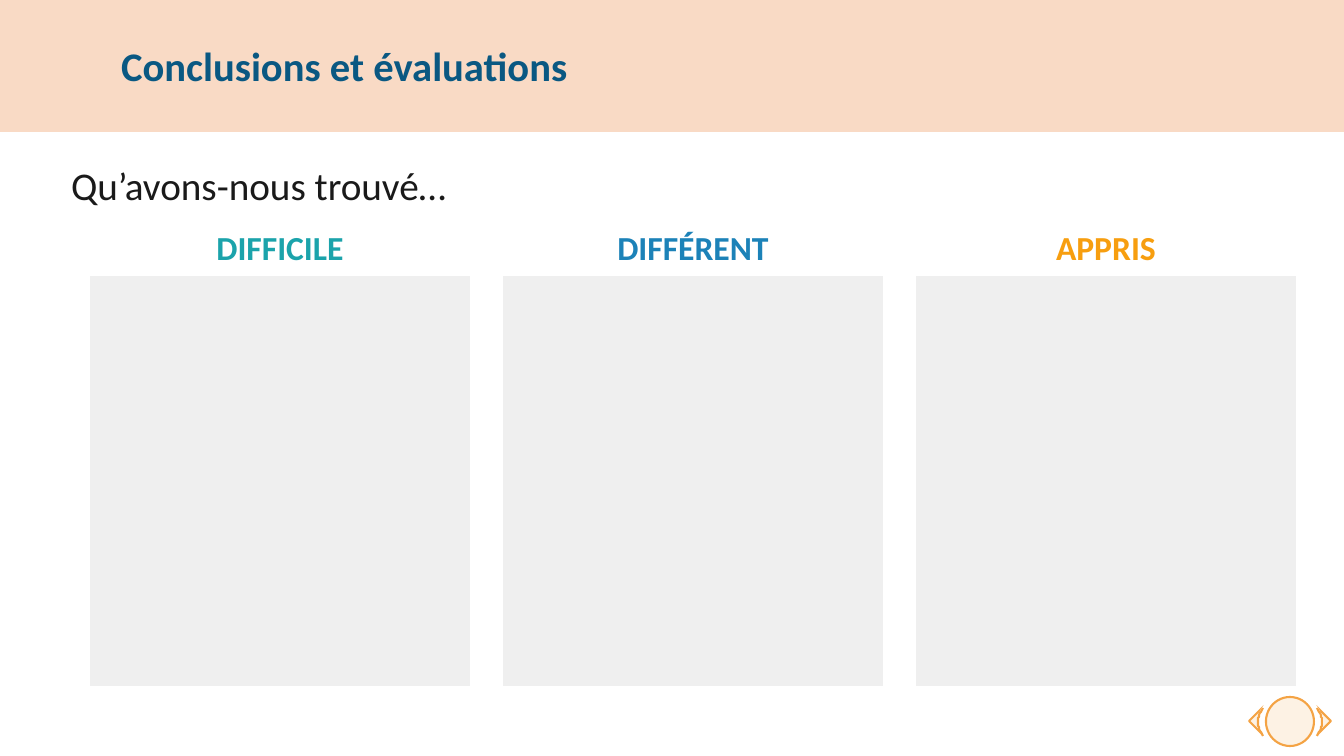
from pptx import Presentation
from pptx.dml.color import RGBColor
from pptx.enum.shapes import MSO_SHAPE
from pptx.enum.text import MSO_ANCHOR, MSO_AUTO_SIZE, PP_ALIGN
from pptx.oxml.ns import qn
from pptx.util import Pt
from lxml.etree import SubElement

PX = 914400 / 100.8
COLORS = {
    "band": "ED7D31", "nav": "F4A344", "white": "FFFFFF", "panel": "EFEFEF",
    "title": "0A5882", "lead": "1A1A1A",
    "teal": "1BA3AB", "blue": "1C82B8", "amber": "F79E0F",
}
COLUMNS = [("DIFFICILE", "teal"), ("DIFFÉRENT", "blue"), ("APPRIS", "amber")]
LEFT, PITCH, WIDE = 90, 413, 380
CENTER = 1290


def emu(*sizes):
    return [round(size * PX) for size in sizes]


def rgb(name):
    return RGBColor.from_string(COLORS[name])


def outline(shape, color):
    shape.shadow.inherit = False
    if color:
        shape.line.color.rgb = rgb(color)
        shape.line.width = Pt(1.5)
    else:
        shape.line.fill.background()


def add_block(slide, kind, box, fill, line=None, alpha=100):
    shape = slide.shapes.add_shape(kind, *emu(*box))
    shape.fill.solid()
    shape.fill.fore_color.rgb = rgb(fill)
    if alpha < 100:
        color = shape.fill._xPr.find(qn("a:solidFill"))[0]
        SubElement(color, qn("a:alpha"), val=str(alpha * 1000))
    outline(shape, line)
    return shape


def add_nav(slide):
    """Draw the round button with an arrow tip on each side."""
    for side in (-1, 1):
        mid = CENTER + side * 25
        arrow = add_block(slide, MSO_SHAPE.STRIPED_RIGHT_ARROW,
                          (mid - 16, 706, 32, 30), "nav", "nav", 14)
        arrow.rotation = 180 if side < 0 else 0
        add_block(slide, MSO_SHAPE.OVAL,
                  (CENTER + side * 7 - 24, 697, 48, 49), "white", "white")
        steps = [step / 8 for step in range(-8, 9)]
        curve = [(CENTER + side * (32 - 5 * t * t), 722 + 14 * t)
                 for t in steps]
        pen = slide.shapes.build_freeform(*curve[0], scale=PX)
        pen.add_line_segments(curve[1:], close=False)
        edge = pen.convert_to_shape()
        edge.fill.background()
        outline(edge, "nav")
    add_block(slide, MSO_SHAPE.OVAL, (CENTER - 24, 697, 48, 49),
              "nav", "nav", 14)


def set_text(holder, box, text, size, color, bold=True,
             align=PP_ALIGN.LEFT, anchor=MSO_ANCHOR.TOP, space=0.9):
    holder.left, holder.top, holder.width, holder.height = emu(*box)
    frame = holder.text_frame
    frame.text = text
    frame.word_wrap = True
    frame.auto_size = MSO_AUTO_SIZE.NONE
    frame.vertical_anchor = anchor
    para = frame.paragraphs[0]
    props = para._p.get_or_add_pPr()
    props.set("marL", "0")
    props.set("indent", "0")
    SubElement(props, qn("a:buNone"))
    para.alignment = align
    para.line_spacing = space
    para.space_before = Pt(0)
    font = para.runs[0].font
    font.name = "Calibri"
    font.size = Pt(size)
    font.bold = bold
    font.color.rgb = rgb(color)
    # Bring the text in front of the blocks drawn so far
    holder._element.getparent().append(holder._element)


def main():
    deck = Presentation()
    deck.slide_width, deck.slide_height = emu(1344, 756)
    slide = deck.slides.add_slide(deck.slide_layouts[4])
    title, lead, *heads = slide.placeholders

    add_nav(slide)
    add_block(slide, MSO_SHAPE.RECTANGLE, (0, 0, 1344, 132), "band", alpha=28)
    set_text(title, (111, 11, 1009, 108), "Conclusions et évaluations", 29,
             "title", anchor=MSO_ANCHOR.MIDDLE, space=1.0)
    set_text(lead, (61, 162, 552, 65), "Qu’avons-nous trouvé…", 28,
             "lead", bold=False)
    for col, (head, (text, color)) in enumerate(zip(heads, COLUMNS)):
        left = LEFT + col * PITCH
        add_block(slide, MSO_SHAPE.RECTANGLE, (left, 276, WIDE, 410), "panel")
        set_text(head, (left - 10, 226, WIDE + 20, 49), text, 24, color,
                 align=PP_ALIGN.CENTER)
    deck.save("out.pptx")


if __name__ == "__main__":
    main()
